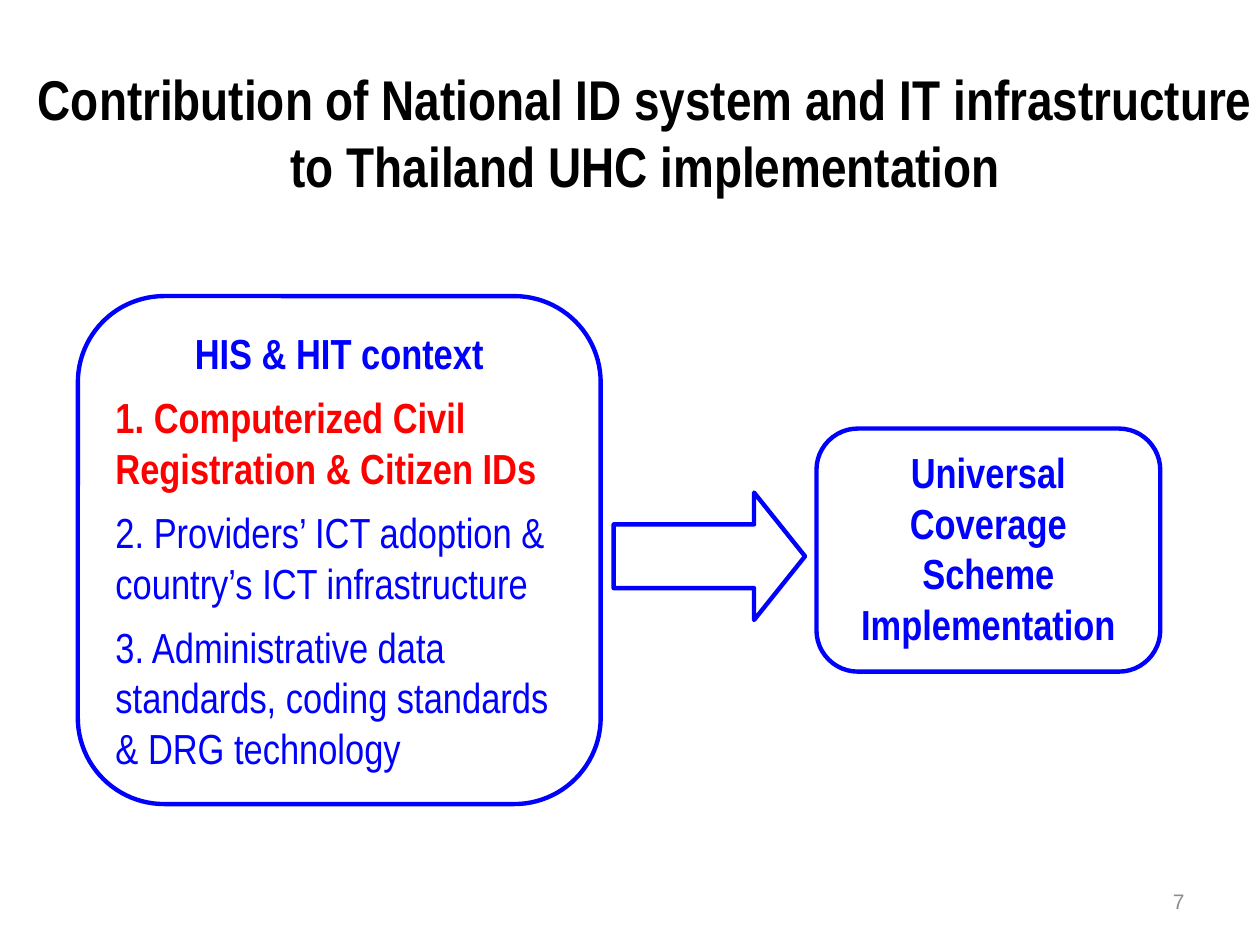
"""Builds the slide on how ID and IT systems support Thailand's UHC."""
from pptx import Presentation
from pptx.dml.color import RGBColor
from pptx.enum.shapes import MSO_SHAPE
from pptx.enum.text import MSO_ANCHOR, PP_ALIGN
from pptx.util import Cm, Pt

BLUE = RGBColor(0x00, 0x00, 0xFF)
RED = RGBColor(0xFF, 0x00, 0x00)
BLACK = RGBColor(0x00, 0x00, 0x00)
GREY = RGBColor(0x8C, 0x8C, 0x8C)
WHITE = RGBColor(0xFF, 0xFF, 0xFF)
LEFT, CENTER, RIGHT = PP_ALIGN.LEFT, PP_ALIGN.CENTER, PP_ALIGN.RIGHT
TOP, MIDDLE = MSO_ANCHOR.TOP, MSO_ANCHOR.MIDDLE
ROUNDED, ARROW = MSO_SHAPE.ROUNDED_RECTANGLE, MSO_SHAPE.RIGHT_ARROW


def write(frame, text, *, size=24, color=BLUE, bold=True, align=CENTER,
          font="Arial Narrow", after=0):
    paragraph = frame.paragraphs[0]
    if paragraph.runs:
        paragraph = frame.add_paragraph()
    paragraph.alignment = align
    paragraph.space_after = Pt(after)
    run = paragraph.add_run()
    run.text = text
    run.font.name = font
    run.font.size = Pt(size)
    run.font.bold = bold
    run.font.color.rgb = color


def outlined(shapes, preset, box, adjustments):
    shape = shapes.add_shape(preset, *map(Cm, box))
    shape.shadow.inherit = False
    shape.fill.solid()
    shape.fill.fore_color.rgb = WHITE
    shape.line.color.rgb = BLUE
    shape.line.width = Pt(2.5)
    for index, value in enumerate(adjustments):
        shape.adjustments[index] = value
    shape.text_frame.vertical_anchor = TOP
    return shape


deck = Presentation()
deck.slide_width, deck.slide_height = Cm(25.4), Cm(19.05)
slide = deck.slides.add_slide(deck.slide_layouts[6])

page_number = slide.shapes.add_textbox(Cm(18.21), Cm(17.65), Cm(5.92), Cm(1.02)).text_frame
page_number.word_wrap = True
page_number.vertical_anchor = MIDDLE
write(page_number, "7", size=12, color=GREY, bold=False, align=RIGHT, font="Arial")

diagram = slide.shapes.add_group_shape().shapes
context = outlined(diagram, ROUNDED, (1.57, 5.97, 10.54, 10.24), [0.17]).text_frame
outlined(diagram, ARROW, (12.37, 9.93, 3.86, 2.57), [0.5, 0.4])
scheme = outlined(diagram, ROUNDED, (16.46, 8.64, 6.93, 4.9), [0.17]).text_frame

write(context, "HIS & HIT context", after=8)
for factor, color, bold in (
    ("1. Computerized Civil Registration & Citizen IDs", RED, True),
    ("2. Providers’ ICT adoption & country’s ICT infrastructure", BLUE, False),
    ("3. Administrative data standards, coding standards & DRG technology", BLUE, False),
):
    write(context, factor, color=color, bold=bold, align=LEFT, after=8)
write(scheme, "Universal Coverage Scheme Implementation", after=8)

title = slide.shapes.add_textbox(Cm(0.41), Cm(1.17), Cm(25.22), Cm(3)).text_frame
title.word_wrap = False
for line in (
    "Contribution of National ID system and IT infrastructure",
    "to Thailand UHC implementation",
):
    write(title, line, size=32, color=BLACK)

deck.save("out.pptx")
